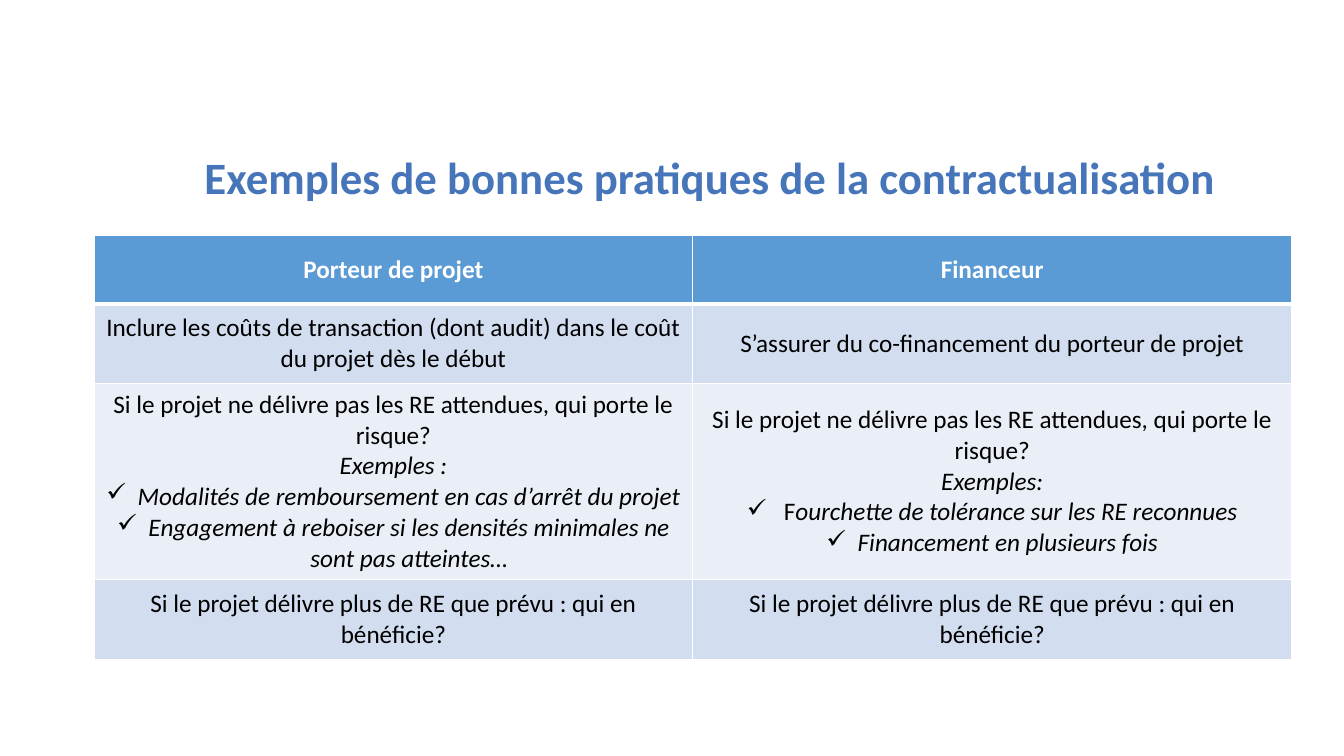
from dataclasses import dataclass

from lxml.etree import SubElement
from pptx import Presentation
from pptx.dml.color import RGBColor
from pptx.enum.text import MSO_ANCHOR, MSO_AUTO_SIZE, PP_ALIGN
from pptx.oxml.ns import qn
from pptx.util import Cm, Pt


@dataclass(frozen=True)
class Theme:
    font: str = "Calibri"
    title_size: int = 32
    table_size: int = 18
    title: str = "4675B9"
    header: str = "5B9BD5"
    bands: tuple = ("D2DEEF", "EAEFF7")
    white: str = "FFFFFF"
    black: str = "000000"


@dataclass(frozen=True)
class Line:
    text: str
    italic: bool = False
    bullet: str = ""
    upright_start: str = ""


def check(text, upright_start=""):
    return Line(text, italic=True, bullet="✓", upright_start=upright_start)


class SlideBuilder:
    def __init__(self, slide, theme):
        self.slide = slide
        self.theme = theme

    def style(self, paragraph, size, color, bold=False, italic=False):
        paragraph.alignment = PP_ALIGN.CENTER
        font = paragraph.font
        font.name = self.theme.font
        font.size = Pt(size)
        font.bold = bold
        font.italic = italic
        font.color.rgb = RGBColor.from_string(color)

    def title(self, text, left, top, width, height):
        shape = self.slide.shapes.title
        shape.left, shape.top = Cm(left), Cm(top)
        shape.width, shape.height = Cm(width), Cm(height)
        frame = shape.text_frame
        frame.text = text
        frame.word_wrap = True
        frame.auto_size = MSO_AUTO_SIZE.NONE
        frame.vertical_anchor = MSO_ANCHOR.TOP
        paragraph = frame.paragraphs[0]
        paragraph.line_spacing = 0.9
        self.style(paragraph, self.theme.title_size, self.theme.title, bold=True)

    def table(self, rows, left, top, width, heights):
        columns = len(rows[0])
        frame = self.slide.shapes.add_table(
            len(rows), columns, Cm(left), Cm(top), Cm(width), Cm(sum(heights)))
        table = frame.table
        for column in table.columns:
            column.width = Cm(width / columns)
        for row_index, (row, height) in enumerate(zip(rows, heights)):
            table.rows[row_index].height = Cm(height)
            for column_index, lines in enumerate(row):
                self.cell(table.cell(row_index, column_index), lines, row_index)

    def cell(self, cell, lines, row_index):
        theme = self.theme
        is_header = row_index == 0
        cell.vertical_anchor = MSO_ANCHOR.MIDDLE
        bottom = 3 if is_header else 1
        top = 3 if row_index == 1 else 1
        self.borders(cell, {"lnL": 1, "lnR": 1, "lnT": top, "lnB": bottom})
        fill = theme.header if is_header else theme.bands[(row_index - 1) % 2]
        cell.fill.solid()
        cell.fill.fore_color.rgb = RGBColor.from_string(fill)
        frame = cell.text_frame
        for index, line in enumerate(lines):
            paragraph = frame.add_paragraph() if index else frame.paragraphs[0]
            if line.bullet:
                self.bullet(paragraph, line.bullet)
            color = theme.white if is_header else theme.black
            self.style(paragraph, theme.table_size, color, is_header, line.italic)
            if line.upright_start:
                run = paragraph.add_run()
                run.text = line.upright_start
                run.font.italic = False
            paragraph.add_run().text = line.text

    def borders(self, cell, widths):
        properties = cell._tc.get_or_add_tcPr()
        for side, points in widths.items():
            border = SubElement(properties, qn(f"a:{side}"), w=str(Pt(points)))
            fill = SubElement(border, qn("a:solidFill"))
            SubElement(fill, qn("a:srgbClr"), val=self.theme.white)

    def bullet(self, paragraph, character):
        properties = paragraph._p.get_or_add_pPr()
        indent = Cm(0.79)
        properties.set("marL", str(indent))
        properties.set("indent", str(-indent))
        SubElement(properties, qn("a:buChar"), char=character)


def main():
    presentation = Presentation()
    presentation.slide_width = Cm(33.87)
    presentation.slide_height = Cm(19.05)
    slide = presentation.slides.add_slide(presentation.slide_layouts[5])
    builder = SlideBuilder(slide, Theme())
    builder.title("Exemples de bonnes pratiques de la contractualisation",
                  4.04, 3.81, 27.71, 2.11)

    risk = Line("Si le projet ne délivre pas les RE attendues, qui porte le risque?")
    surplus = [Line("Si le projet délivre plus de RE que prévu : qui en bénéficie?")]
    rows = [
        ([Line("Porteur de projet")], [Line("Financeur")]),
        ([Line("Inclure les coûts de transaction (dont audit) dans le coût "
               "du projet dès le début")],
         [Line("S’assurer du co-financement du porteur de projet")]),
        ([risk,
          Line("Exemples :", italic=True),
          check("Modalités de remboursement en cas d’arrêt du projet"),
          check("Engagement à reboiser si les densités minimales ne "
                "sont pas atteintes…")],
         [risk,
          Line("Exemples:", italic=True),
          check("ourchette de tolérance sur les RE reconnues", upright_start=" F"),
          check("Financement en plusieurs fois")]),
        (surplus, surplus),
    ]
    builder.table(rows, 2.37, 5.93, 30.18, [1.73, 2, 4.95, 2])
    presentation.save("out.pptx")


if __name__ == "__main__":
    main()
